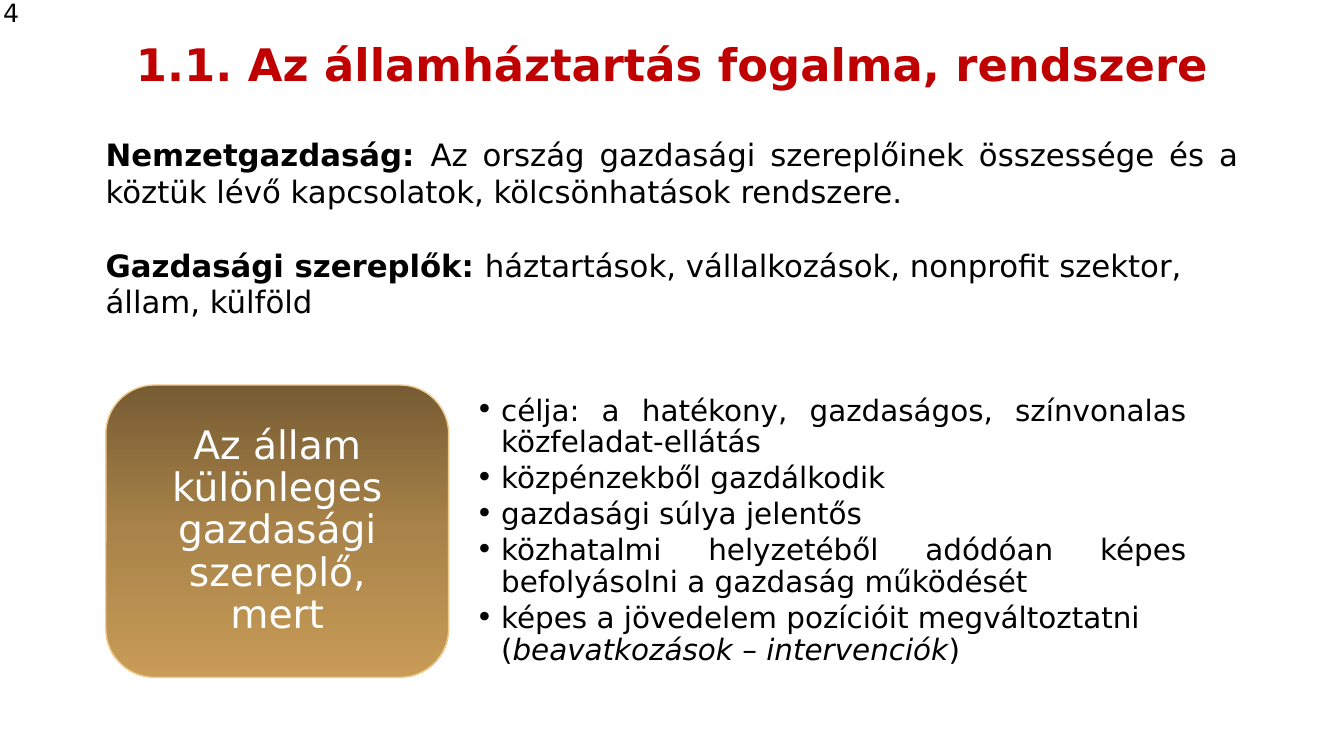
from copy import deepcopy
from dataclasses import dataclass

from lxml.etree import SubElement
from pptx import Presentation
from pptx.dml.color import RGBColor
from pptx.enum.shapes import MSO_SHAPE
from pptx.enum.text import MSO_ANCHOR, MSO_AUTO_SIZE, PP_ALIGN
from pptx.oxml.ns import qn
from pptx.util import Inches, Pt


@dataclass(frozen=True)
class Theme:
    font: str = "DejaVu Sans"
    text: str = "000000"
    title: str = "C00000"
    inverse: str = "FFFFFF"
    card_line: str = "F1C98B"
    card_gradient: tuple = ((0, "775C33"), (0.5, "A98349"), (1, "C89C57"))
    title_size: int = 32
    card_size: int = 28
    intro_size: int = 22
    list_size: int = 21
    number_size: int = 18


THEME = Theme()

TITLE = "1.1. Az államháztartás fogalma, rendszere"
INTRO = [
    ("Nemzetgazdaság: ", "Az ország gazdasági szereplőinek összessége és a "
     "köztük lévő kapcsolatok, kölcsönhatások rendszere."),
    ("Gazdasági szereplők: ", "háztartások, vállalkozások, nonprofit szektor,"),
    ("", "állam, külföld"),
]
CARD = "Az állam különleges gazdasági szereplő, mert"
# Each reason: alignment, then (text, italic) spans
REASONS = [
    (PP_ALIGN.JUSTIFY, [("célja: a hatékony, gazdaságos, színvonalas közfeladat-ellátás", False)]),
    (PP_ALIGN.LEFT, [("közpénzekből gazdálkodik", False)]),
    (PP_ALIGN.LEFT, [("gazdasági súlya jelentős", False)]),
    (PP_ALIGN.JUSTIFY, [("közhatalmi helyzetéből adódóan képes befolyásolni "
                         "a gazdaság működését", False)]),
    (PP_ALIGN.LEFT, [("képes a jövedelem pozícióit megváltoztatni (", False),
                     ("beavatkozások – intervenciók", True), (")", False)]),
]


def place(shape, box):
    shape.left, shape.top, shape.width, shape.height = map(Inches, box)


def set_frame(frame, anchor, horizontal=0.1, vertical=0.05):
    frame.word_wrap = True
    frame.auto_size = MSO_AUTO_SIZE.NONE
    frame.vertical_anchor = anchor
    frame.margin_left = frame.margin_right = Inches(horizontal)
    frame.margin_top = frame.margin_bottom = Inches(vertical)


def style(para, size, color=THEME.text, align=PP_ALIGN.LEFT, spacing=1.0):
    para.alignment = align
    para.line_spacing = spacing
    para.space_before = Pt(0)
    para.font.name = THEME.font
    para.font.size = Pt(size)
    para.font.color.rgb = RGBColor.from_string(color)


def paragraphs(frame, items):
    """Yield each item with its own paragraph of the frame."""
    for index, item in enumerate(items):
        yield (frame.add_paragraph() if index else frame.paragraphs[0]), item


def add_bullet(para, indent):
    properties = para._p.get_or_add_pPr()
    properties.set("marL", str(indent))
    properties.set("indent", str(-indent))
    SubElement(properties, qn("a:buFont")).set("typeface", THEME.font)
    SubElement(properties, qn("a:buChar")).set("char", "•")


def fill_gradient(shape, stops):
    """Fill the shape from top to bottom with any number of stops."""
    shape.fill.gradient()
    shape.fill.gradient_angle = 270
    stop_list = shape._element.spPr.find(qn("a:gradFill")).find(qn("a:gsLst"))
    while len(stop_list) < len(stops):
        stop_list.append(deepcopy(stop_list[-1]))
    for stop, (position, color) in zip(shape.fill.gradient_stops, stops):
        stop.position = position
        stop.color.rgb = RGBColor.from_string(color)


def add_title(page, box):
    title = page.shapes.title
    place(title, box)
    set_frame(title.text_frame, MSO_ANCHOR.TOP)
    title.text_frame.text = TITLE
    para = title.text_frame.paragraphs[0]
    style(para, THEME.title_size, THEME.title, PP_ALIGN.CENTER)
    para.font.bold = True


def add_page_number(page, box):
    frame = page.shapes.add_textbox(*map(Inches, box)).text_frame
    set_frame(frame, MSO_ANCHOR.TOP, horizontal=0.03, vertical=0)
    frame.text = "4"
    style(frame.paragraphs[0], THEME.number_size)


def add_intro(page, box):
    frame = page.shapes.add_textbox(*map(Inches, box)).text_frame
    set_frame(frame, MSO_ANCHOR.TOP)
    for para, (term, meaning) in paragraphs(frame, INTRO):
        style(para, THEME.intro_size, align=PP_ALIGN.JUSTIFY)
        if term:
            span = para.add_run()
            span.text = term
            span.font.bold = True
        para.add_run().text = meaning
    frame.paragraphs[1].space_before = Pt(26)


def add_card(page, box):
    card = page.shapes.add_shape(MSO_SHAPE.ROUNDED_RECTANGLE, *map(Inches, box))
    card.shadow.inherit = False
    fill_gradient(card, THEME.card_gradient)
    card.line.color.rgb = RGBColor.from_string(THEME.card_line)
    card.line.width = Pt(1)
    set_frame(card.text_frame, MSO_ANCHOR.MIDDLE, horizontal=0.26, vertical=0.2)
    card.text_frame.text = CARD
    style(card.text_frame.paragraphs[0], THEME.card_size, THEME.inverse,
          PP_ALIGN.CENTER, 0.9)


def add_reasons(page, box):
    body = page.placeholders[1]
    place(body, box)
    set_frame(body.text_frame, MSO_ANCHOR.MIDDLE, horizontal=0.27, vertical=0.14)
    for para, (align, spans) in paragraphs(body.text_frame, REASONS):
        add_bullet(para, Inches(0.25))
        style(para, THEME.list_size, align=align, spacing=0.9)
        para.space_after = Pt(3)
        for text, italic in spans:
            span = para.add_run()
            span.text = text
            if italic:
                span.font.italic = True


def add_state_role(page, box):
    """Place the card on the left and its reasons beside it."""
    left, top, width, height = box
    card_width, inset = 3.4, 0.18
    add_card(page, (left, top, card_width, height))
    add_reasons(page, (left + card_width, top + inset,
                       width - card_width, height - 2 * inset))


def main():
    deck = Presentation()
    deck.slide_width, deck.slide_height = Inches(13.33), Inches(7.5)
    page = deck.slides.add_slide(deck.slide_layouts[1])
    add_title(page, (1.15, 0.31, 11.04, 0.9))
    add_page_number(page, (0, -0.03, 2.65, 0.39))
    add_intro(page, (0.95, 1.3, 11.43, 2.26))
    add_state_role(page, (1.05, 3.82, 10.99, 2.9))
    deck.save("out.pptx")


if __name__ == "__main__":
    main()
